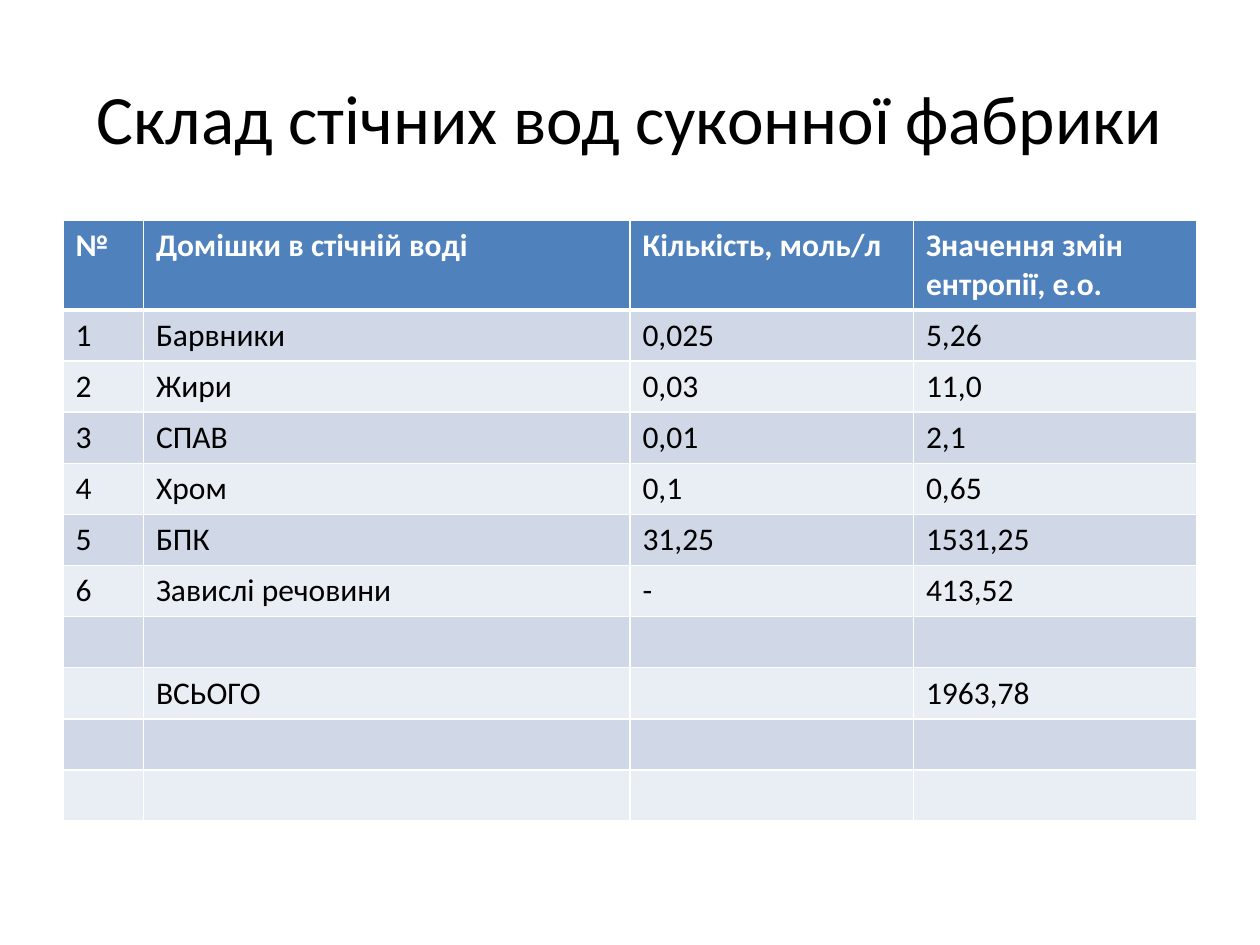
from lxml.etree import SubElement
from pptx import Presentation
from pptx.dml.color import RGBColor
from pptx.enum.text import MSO_ANCHOR as Anchor, PP_ALIGN as Align
from pptx.oxml.ns import qn
from pptx.util import Pt

WHITE = RGBColor(0xFF, 0xFF, 0xFF)
BLACK = RGBColor(0x00, 0x00, 0x00)
HEADER_BLUE = RGBColor(0x4F, 0x81, 0xBD)
BANDS = [RGBColor(0xE9, 0xED, 0xF4), RGBColor(0xD0, 0xD8, 0xE8)]

TITLE = "Склад стічних вод суконної фабрики"
TITLE_BOX = (36, 21.6, 648, 90)
TITLE_FONT = {"name": "Calibri", "size": Pt(39.6)}
TABLE_BOX = (36, 126, 648, 342.7)
COLUMN_WIDTHS = [46, 278, 162, 162]
ROW_HEIGHT = 29.2
CELL_FONT = {"name": "Calibri", "size": Pt(18)}
ROWS = [
    ["№", "Домішки в стічній воді", "Кількість, моль/л", "Значення змін ентропії, е.о."],
    ["1", "Барвники", "0,025", "5,26"],
    ["2", "Жири", "0,03", "11,0"],
    ["3", "СПАВ", "0,01", "2,1"],
    ["4", "Хром", "0,1", "0,65"],
    ["5", "БПК", "31,25", "1531,25"],
    ["6", "Завислі речовини", "-", "413,52"],
    ["", "", "", ""],
    ["", "ВСЬОГО", "", "1963,78"],
    ["", "", "", ""],
    ["", "", "", ""],
]


def set_attributes(target, values):
    """Set each named attribute of the target."""
    for name, value in values.items():
        setattr(target, name, value)


def set_borders(cell, widths):
    """Draw white cell borders with the given widths in points."""
    properties = cell._tc.get_or_add_tcPr()
    for side, width in widths.items():
        line = SubElement(properties, qn(f"a:ln{side}"), w=str(Pt(width)))
        fill = SubElement(line, qn("a:solidFill"))
        SubElement(fill, qn("a:srgbClr"), val=str(WHITE))


def format_cell(cell, text, row_index):
    """Fill one cell with text, borders and its band colour."""
    is_header = row_index == 0
    set_borders(cell, {"L": 1, "R": 1, "T": 3 if row_index == 1 else 1, "B": 3 if is_header else 1})
    cell.fill.solid()
    cell.fill.fore_color.rgb = HEADER_BLUE if is_header else BANDS[row_index % 2]
    paragraph = cell.text_frame.paragraphs[0]
    set_attributes(paragraph.font, CELL_FONT)
    if text:
        run = paragraph.add_run()
        run.text = text
        set_attributes(run.font, {**CELL_FONT, "bold": is_header})
        run.font.color.rgb = WHITE if is_header else BLACK


def place_title(slide, box):
    """Move and format the title placeholder."""
    title = slide.shapes.title
    set_attributes(title, dict(zip(("left", "top", "width", "height"), map(Pt, box))))
    title.text_frame.text = TITLE
    set_attributes(title.text_frame, {"vertical_anchor": Anchor.MIDDLE, "word_wrap": True})
    paragraph = title.text_frame.paragraphs[0]
    paragraph.alignment = Align.CENTER
    font = paragraph.runs[0].font
    set_attributes(font, TITLE_FONT)
    font.color.rgb = BLACK


def place_composition_table(slide, box):
    """Add the wastewater composition table in the given box."""
    frame = slide.shapes.add_table(len(ROWS), len(COLUMN_WIDTHS), *map(Pt, box))
    table = frame.table
    for column, width in zip(table.columns, COLUMN_WIDTHS):
        column.width = Pt(width)
    for row_index, (row, texts) in enumerate(zip(table.rows, ROWS)):
        row.height = Pt(ROW_HEIGHT)
        for cell, text in zip(row.cells, texts):
            format_cell(cell, text, row_index)
    frame.height = Pt(box[3])


def main():
    """Build and save the presentation."""
    presentation = Presentation()
    set_attributes(presentation, {"slide_width": Pt(720), "slide_height": Pt(540)})
    slide = presentation.slides.add_slide(presentation.slide_layouts[5])
    place_title(slide, TITLE_BOX)
    place_composition_table(slide, TABLE_BOX)
    presentation.save("out.pptx")


if __name__ == "__main__":
    main()
